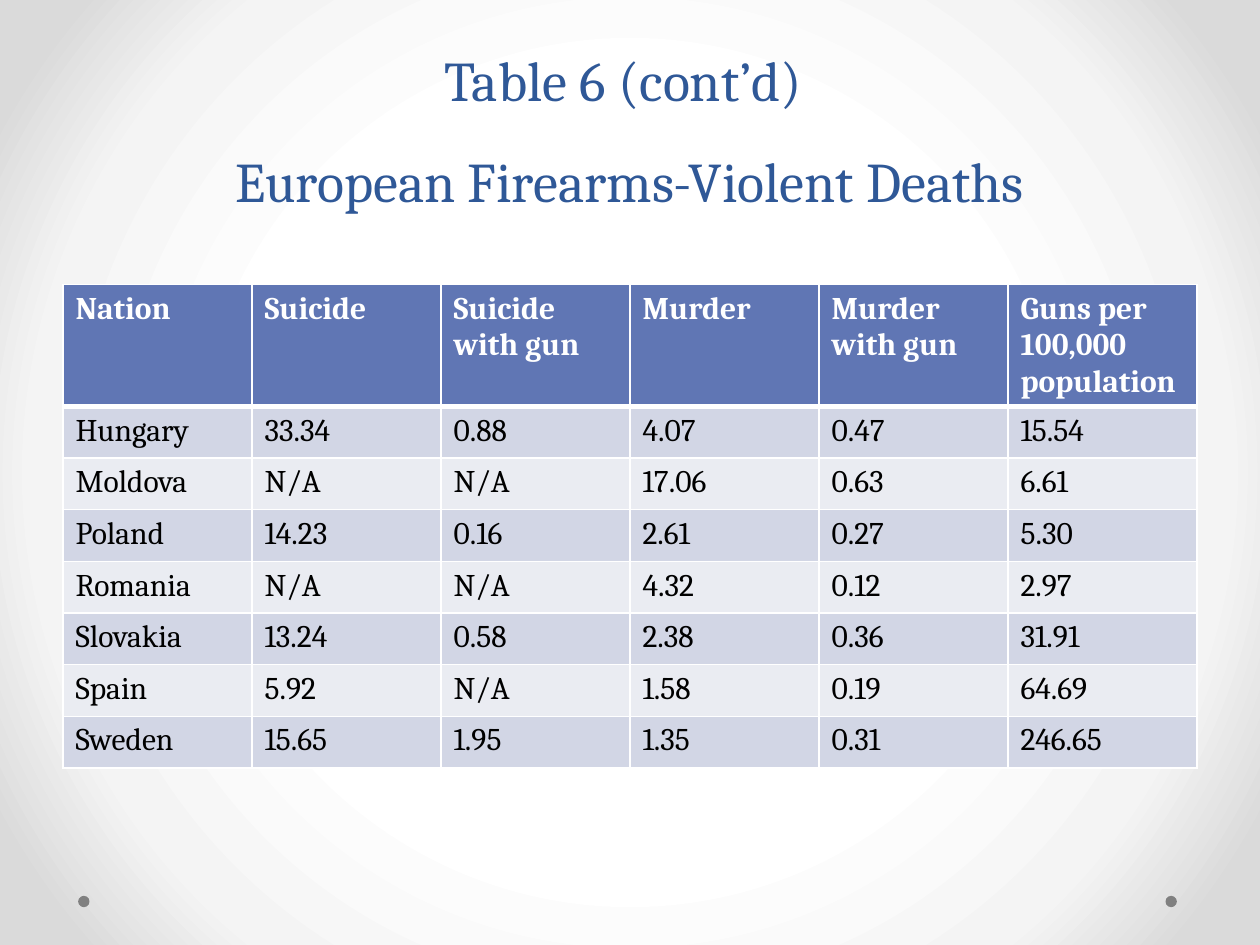
from pptx import Presentation, util as u
from pptx.dml.color import RGBColor
from pptx.enum import shapes, text
from pptx.oxml import parse_xml
from pptx.oxml.ns import nsdecls, qn

FONT = "Cambria"
COLORS = {
    "title": "2F5897",
    "header": "6076B4",
    "odd_row": "D2D6E5",
    "even_row": "EAECF2",
    "white": "FFFFFF",
    "black": "000000",
    "dot": "808080",
}
BACKGROUND_STOPS = [(50, "FFFFFF"), (76, "F4F4F4"), (92, "DADADA")]
HEADINGS = ["Nation", "Suicide", "Suicide with gun", "Murder",
            "Murder with gun", "Guns per 100,000 population"]
DEATHS = [
    ["Hungary", "33.34", "0.88", "4.07", "0.47", "15.54"],
    ["Moldova", "N/A", "N/A", "17.06", "0.63", "6.61"],
    ["Poland", "14.23", "0.16", "2.61", "0.27", "5.30"],
    ["Romania", "N/A", "N/A", "4.32", "0.12", "2.97"],
    ["Slovakia", "13.24", "0.58", "2.38", "0.36", "31.91"],
    ["Spain", "5.92", "N/A", "1.58", "0.19", "64.69"],
    ["Sweden", "15.65", "1.95", "1.35", "0.31", "246.65"],
]


def write_text(frame, words, size, color, bold=False, align=None, line_spacing=None):
    frame.word_wrap = True
    paragraph = frame.paragraphs[0]
    paragraph.text = words
    paragraph.alignment = align
    paragraph.line_spacing = line_spacing
    for run in paragraph.runs:
        run.font.name = FONT
        run.font.size = u.Pt(size)
        run.font.bold = bold
        run.font.color.rgb = RGBColor.from_string(COLORS[color])


def paint_background(slide):
    slide.background.fill.solid()
    properties = next(slide.element.iter(qn("p:bgPr")))
    stops = "".join(
        f'<a:gs pos="{position * 1000}"><a:srgbClr val="{color}"/></a:gs>'
        for position, color in BACKGROUND_STOPS)
    properties.replace(properties[0], parse_xml(
        f'<a:gradFill {nsdecls("a")} rotWithShape="1"><a:gsLst>{stops}</a:gsLst>'
        '<a:path path="circle"><a:fillToRect l="50000" t="50000" r="50000" b="50000"/>'
        '</a:path></a:gradFill>'))


def add_dots(slide, lefts, top, size):
    for left in lefts:
        dot = slide.shapes.add_shape(shapes.MSO_SHAPE.OVAL, left, top, size, size)
        dot.shadow.inherit = False
        dot.fill.solid()
        dot.fill.fore_color.rgb = RGBColor.from_string(COLORS["dot"])
        dot.line.fill.background()


def place_title(slide, left, top, width, height):
    title = slide.shapes.title
    title.left, title.top, title.width, title.height = left, top, width, height
    title.text_frame.auto_size = text.MSO_AUTO_SIZE.NONE
    title.text_frame.vertical_anchor = text.MSO_ANCHOR.BOTTOM
    write_text(title.text_frame, "Table 6 (cont’d) \vEuropean Firearms-Violent Deaths",
               size=32, color="title", align=text.PP_ALIGN.CENTER,
               line_spacing=u.Pt(58))


def set_borders(cell, bottom, top):
    properties = cell._tc.get_or_add_tcPr()
    widths = {"lnL": 1, "lnR": 1, "lnT": top, "lnB": bottom}
    for index, (side, width) in enumerate(widths.items()):
        properties.insert(index, parse_xml(
            f'<a:{side} {nsdecls("a")} w="{u.Pt(width)}"><a:solidFill>'
            f'<a:srgbClr val="{COLORS["white"]}"/></a:solidFill></a:{side}>'))


def add_deaths_table(slide, left, top, width, header_height, row_height):
    rows = [HEADINGS] + DEATHS
    height = header_height + row_height * len(DEATHS)
    table = slide.shapes.add_table(
        len(rows), len(HEADINGS), left, top, width, height).table
    for row_index, values in enumerate(rows):
        is_header = row_index == 0
        table.rows[row_index].height = header_height if is_header else row_height
        fill = "header" if is_header else "odd_row" if row_index % 2 else "even_row"
        for column_index, value in enumerate(values):
            cell = table.cell(row_index, column_index)
            cell.fill.solid()
            cell.fill.fore_color.rgb = RGBColor.from_string(COLORS[fill])
            set_borders(cell, bottom=3 if is_header else 1,
                        top=3 if row_index == 1 else 1)
            write_text(cell.text_frame, value, size=18, bold=is_header,
                       color="white" if is_header else "black")


def main():
    presentation = Presentation()
    presentation.slide_width = u.Inches(10)
    presentation.slide_height = u.Inches(7.5)
    slide = presentation.slides.add_slide(presentation.slide_layouts[5])
    paint_background(slide)
    add_dots(slide, [u.Inches(0.62), u.Inches(9.25)], u.Inches(7.11), u.Inches(0.09))
    place_title(slide, u.Inches(0.5), u.Inches(0), u.Inches(9), u.Inches(1.75))
    add_deaths_table(slide, u.Inches(0.5), u.Inches(2.26), u.Inches(9),
                     header_height=u.Inches(0.96), row_height=u.Inches(0.41))
    presentation.save("out.pptx")


if __name__ == "__main__":
    main()
